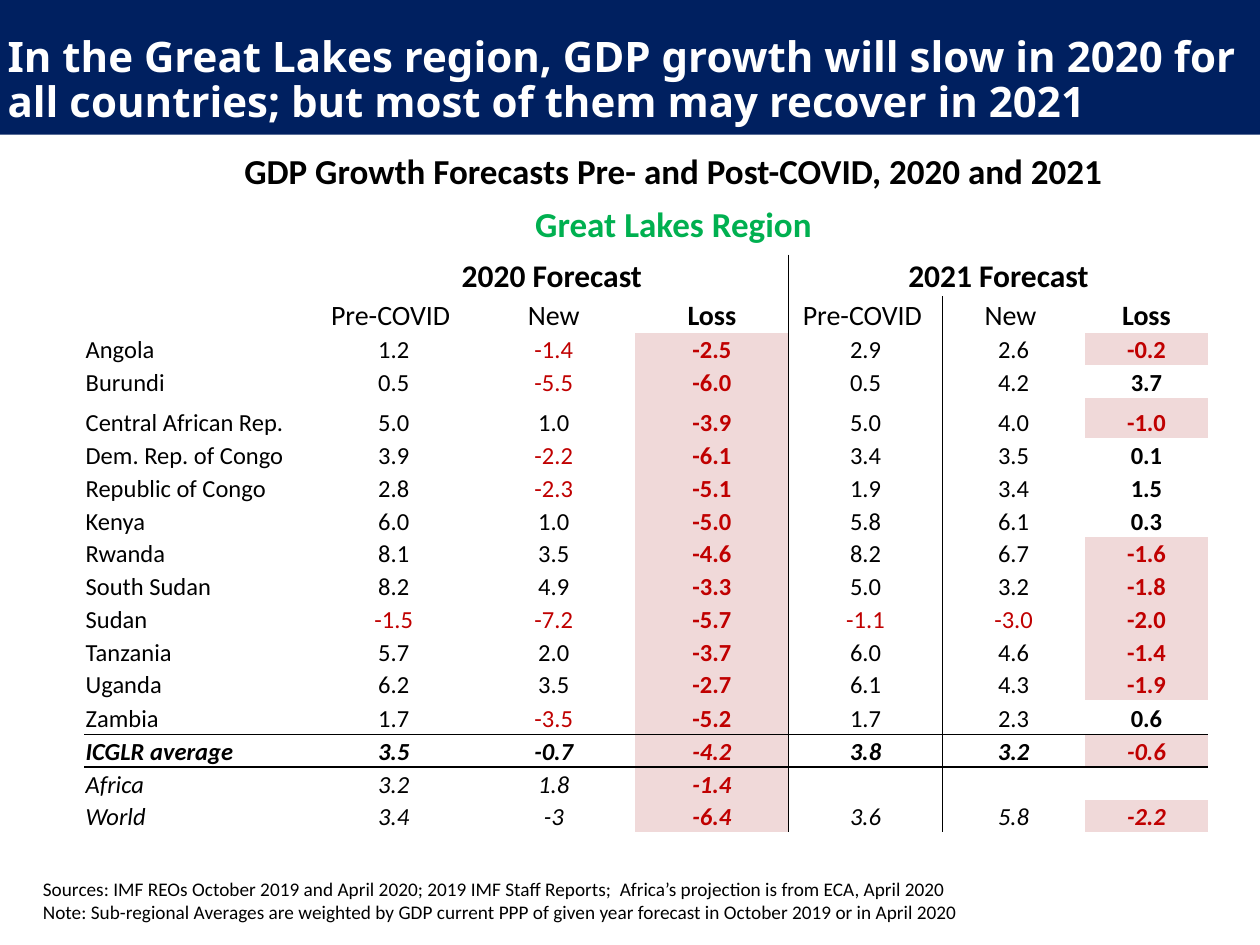
from dataclasses import dataclass

import lxml.etree
import pptx
import pptx.dml.color
import pptx.enum.shapes
import pptx.enum.text
import pptx.oxml.ns
import pptx.util
from pptx.util import Inches

COLORS = {"navy": "002060", "white": "FFFFFF", "black": "000000",
          "green": "00B050", "red": "C00000", "pink": "F0D9D9"}
ALIGN = pptx.enum.text.PP_ALIGN
ANCHOR = pptx.enum.text.MSO_ANCHOR
NO_GRID_STYLE = "{2D5ABB26-0587-4C30-8999-92F81FD0307C}"
LOSS_COLS = (3, 6)


@dataclass
class Style:
    size: float
    color: str = "black"
    bold: bool = False
    italic: bool = False
    name: str = "Calibri"


@dataclass
class Row:
    label: str
    values: tuple
    height: float = 0.26
    bold: bool = False
    italic: bool = False


ROWS = [
    Row("Angola", ("1.2", "-1.4", "-2.5", "2.9", "2.6", "-0.2")),
    Row("Burundi", ("0.5", "-5.5", "-6.0", "0.5", "4.2", "3.7")),
    Row("Central African Rep.", ("5.0", "1.0", "-3.9", "5.0", "4.0", "-1.0"), height=0.32),
    Row("Dem. Rep. of Congo", ("3.9", "-2.2", "-6.1", "3.4", "3.5", "0.1")),
    Row("Republic of Congo", ("2.8", "-2.3", "-5.1", "1.9", "3.4", "1.5")),
    Row("Kenya", ("6.0", "1.0", "-5.0", "5.8", "6.1", "0.3")),
    Row("Rwanda", ("8.1", "3.5", "-4.6", "8.2", "6.7", "-1.6")),
    Row("South Sudan", ("8.2", "4.9", "-3.3", "5.0", "3.2", "-1.8")),
    Row("Sudan", ("-1.5", "-7.2", "-5.7", "-1.1", "-3.0", "-2.0")),
    Row("Tanzania", ("5.7", "2.0", "-3.7", "6.0", "4.6", "-1.4")),
    Row("Uganda", ("6.2", "3.5", "-2.7", "6.1", "4.3", "-1.9")),
    Row("Zambia", ("1.7", "-3.5", "-5.2", "1.7", "2.3", "0.6"), height=0.27),
    Row("ICGLR average", ("3.5", "-0.7", "-4.2", "3.8", "3.2", "-0.6"), bold=True, italic=True),
    Row("Africa", ("3.2", "1.8", "-1.4", "", "", ""), italic=True),
    Row("World", ("3.4", "-3", "-6.4", "3.6", "5.8", "-2.2"), italic=True),
]
HEADERS = [
    (0.33, 18, ("", "2020 Forecast", "", "", "2021 Forecast", "", ""), (1, 4)),
    (0.29, 16, ("", "Pre-COVID ", "New", "Loss", "Pre-COVID ", "New ", "Loss"), LOSS_COLS),
]
COL_WIDTHS = (1.83, 1.25, 1.29, 1.22, 1.22, 1.13, 0.98)
AVERAGE_ROW = len(HEADERS) + [row.label for row in ROWS].index("ICGLR average")


def rgb(color: str) -> pptx.dml.color.RGBColor:
    return pptx.dml.color.RGBColor.from_string(COLORS[color])


def set_attrs(obj, values: dict) -> None:
    for key, value in values.items():
        setattr(obj, key, value)


def add_run(p, text: str, style: Style) -> None:
    r = p.add_run()
    r.text = text
    set_attrs(r.font, {"size": pptx.util.Pt(style.size), "bold": style.bold,
                       "italic": style.italic, "name": style.name})
    r.font.color.rgb = rgb(style.color)


def fill_text(sp, box: tuple, lines: list, anchor, para: dict, bullets_off: bool = False) -> None:
    set_attrs(sp, dict(zip(("left", "top", "width", "height"), map(Inches, box))))
    tf = sp.text_frame
    set_attrs(tf, {"word_wrap": True, "auto_size": pptx.enum.text.MSO_AUTO_SIZE.NONE,
                   "vertical_anchor": anchor, "margin_left": 0, "margin_right": 0,
                   "margin_top": 0, "margin_bottom": 0})
    for i, (text, style) in enumerate(lines):
        p = tf.add_paragraph() if i else tf.paragraphs[0]
        set_attrs(p, para)
        if bullets_off:
            pPr = p._p.get_or_add_pPr()
            set_attrs(p, {"space_before": pptx.util.Pt(0)})
            pPr.set("marL", "0")
            pPr.set("indent", "0")
            lxml.etree.SubElement(pPr, pptx.oxml.ns.qn("a:buNone"))
        add_run(p, text, style)


def add_border(cell, side: str) -> None:
    qn = pptx.oxml.ns.qn
    ln = lxml.etree.SubElement(cell._tc.get_or_add_tcPr(), qn(f"a:ln{side}"), w="12700")
    solid = lxml.etree.SubElement(ln, qn("a:solidFill"))
    lxml.etree.SubElement(solid, qn("a:srgbClr"), val=COLORS["black"])


def format_cell(cell, row: int, col: int, text: str, style: Style, fill: str) -> None:
    sides = {"L": col == 4, "R": col == 3 or (row == 0 and col == 1),
             "T": row == AVERAGE_ROW, "B": row == AVERAGE_ROW - 1}
    for side, shown in sides.items():
        if shown:
            add_border(cell, side)
    set_attrs(cell, {"margin_left": Inches(0.01), "margin_right": Inches(0.01),
                     "margin_top": Inches(0.01), "margin_bottom": 0,
                     "vertical_anchor": ANCHOR.BOTTOM})
    cell.fill.solid()
    cell.fill.fore_color.rgb = rgb(fill)
    p = cell.text_frame.paragraphs[0]
    p.alignment = ALIGN.CENTER if col else ALIGN.LEFT
    if text:
        add_run(p, text, style)
    else:
        p._p.get_or_add_endParaRPr().set("sz", str(style.size * 100))


def add_forecast_table(s) -> None:
    heights = [h[0] for h in HEADERS] + [row.height for row in ROWS]
    frame = s.shapes.add_table(len(heights), len(COL_WIDTHS), Inches(0.67), Inches(2.02),
                               Inches(sum(COL_WIDTHS)), Inches(sum(heights)))
    table = frame.table
    set_attrs(table, {"first_row": False, "horz_banding": False})
    table._tbl.tblPr.find(pptx.oxml.ns.qn("a:tableStyleId")).text = NO_GRID_STYLE
    for column, width in zip(table.columns, COL_WIDTHS):
        column.width = Inches(width)
    for table_row, height in zip(table.rows, heights):
        table_row.height = Inches(height)

    for i, (_, size, texts, bold_cols) in enumerate(HEADERS):
        for col, text in enumerate(texts):
            style = Style(size, bold=col in bold_cols)
            format_cell(table.cell(i, col), i, col, text, style, "white")
    for i, row in enumerate(ROWS, len(HEADERS)):
        for col, text in enumerate((row.label, *row.values)):
            loss = col in LOSS_COLS
            negative = text.startswith("-")
            color = "red" if negative and (loss or not row.italic) else "black"
            style = Style(14, color, row.bold or loss, row.italic)
            fill = "pink" if negative and loss else "white"
            format_cell(table.cell(i, col), i, col, text, style, fill)
    for col in (1, 4):
        table.cell(0, col).merge(table.cell(0, col + 2))


def main() -> None:
    prs = pptx.Presentation()
    set_attrs(prs, {"slide_width": Inches(10), "slide_height": Inches(7.5)})
    s = prs.slides.add_slide(prs.slide_layouts[1])

    band = s.shapes.add_shape(pptx.enum.shapes.MSO_SHAPE.RECTANGLE, 0, 0, Inches(10), Inches(1.07))
    band.shadow.inherit = False
    band.fill.solid()
    band.fill.fore_color.rgb = rgb("navy")
    band.line.fill.background()
    s.shapes._spTree.insert(2, band._element)

    fill_text(s.shapes.title, (0.06, 0.09, 9.93, 0.91),
              [("In the Great Lakes region, GDP growth will slow in 2020 for all countries; "
                "but most of them may recover in 2021",
                Style(24, "white", bold=True, name="Noto Sans"))],
              ANCHOR.BOTTOM, {"alignment": ALIGN.LEFT, "line_spacing": 0.88})
    fill_text(s.placeholders[1], (1.22, 1.19, 8.25, 0.37),
              [("GDP Growth Forecasts Pre- and Post-COVID, 2020 and 2021", Style(20, bold=True)),
               ("Great Lakes Region", Style(20, "green", bold=True))],
              ANCHOR.TOP, {"alignment": ALIGN.CENTER, "space_after": pptx.util.Pt(6)},
              bullets_off=True)
    add_forecast_table(s)
    fill_text(s.shapes.add_textbox(0, 0, 0, 0), (0.34, 6.96, 9.69, 0.37),
              [("Sources: IMF REOs October 2019 and April 2020; 2019 IMF Staff Reports;  "
                "Africa’s projection is from ECA, April 2020", Style(11)),
               ("Note: Sub-regional Averages are weighted by GDP current PPP of given year "
                "forecast in October 2019 or in April 2020", Style(11))],
              ANCHOR.BOTTOM, {"alignment": ALIGN.LEFT})
    prs.save("out.pptx")


if __name__ == "__main__":
    main()
